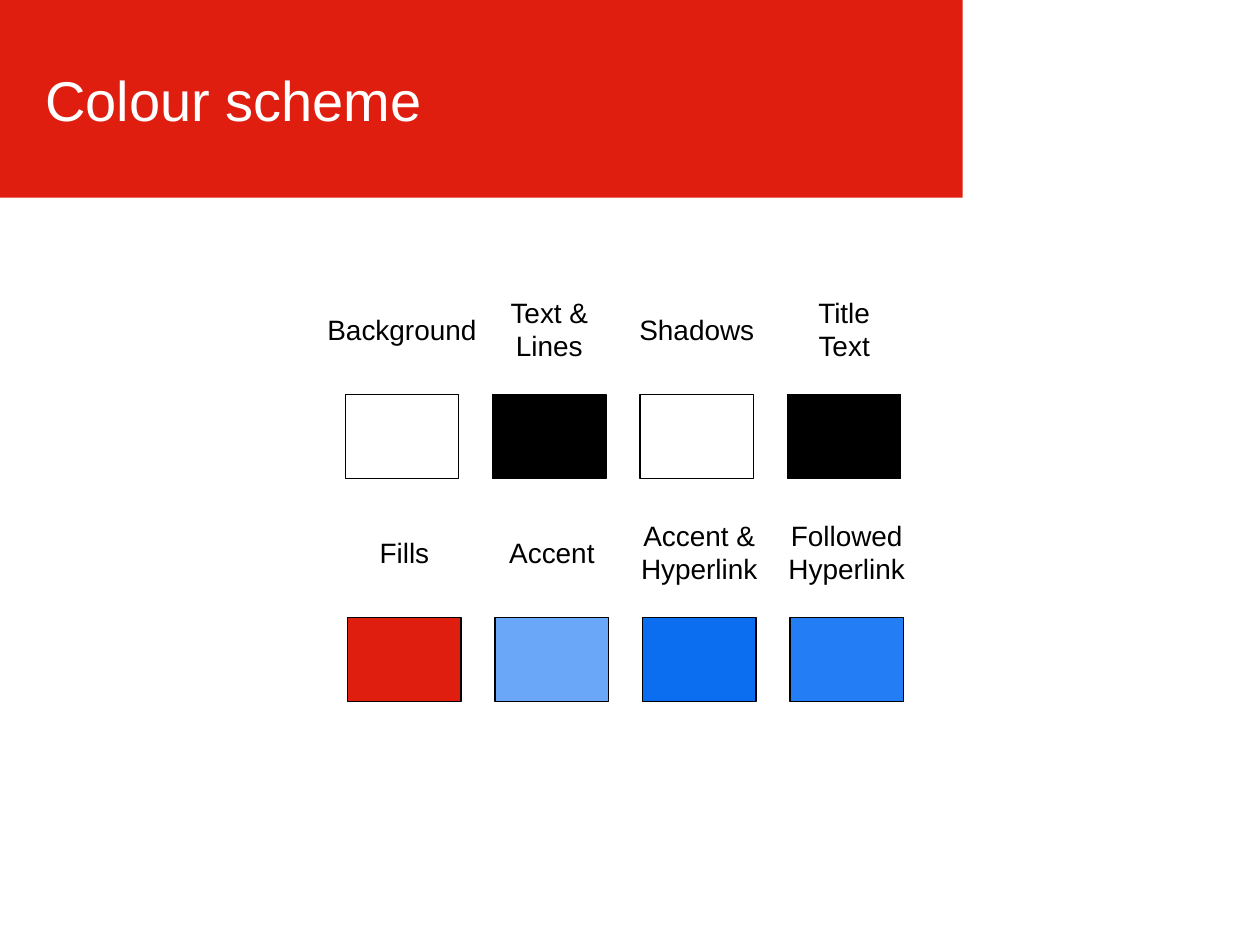
import pptx
import pptx.dml.color
import pptx.enum.shapes
import pptx.enum.text
import pptx.util

COLOURS = {
    "white": "FFFFFF",
    "black": "000000",
    "red": "DF1E0F",
    "light blue": "6BA7F8",
    "blue": "0B6DEF",
    "mid blue": "237DF5",
}
FONT = "Arial"
SLIDE_WIDTH, SLIDE_HEIGHT = 10, 7.5
COLUMN_PITCH = 1.17
SWATCH_WIDTH, SWATCH_HEIGHT = 0.9, 0.67
LABEL_RISE = 0.52  # from label centre down to swatch top
LINE_HEIGHT, LABEL_PADDING = 0.27, 0.1

# Each row: left, top of swatches, then (label, label width, colour).
PALETTE = [
    (2.74, 3.13, [
        ("Background", 1.39, "white"),
        ("Text &\nLines", 0.84, "black"),
        ("Shadows", 1.12, "white"),
        ("Title\vText", 0.63, "black"),
    ]),
    (2.76, 4.9, [
        ("Fills", 0.61, "red"),
        ("Accent", 0.89, "light blue"),
        ("Accent &\nHyperlink", 1.14, "blue"),
        ("Followed\nHyperlink", 1.14, "mid blue"),
    ]),
]


def rgb(name):
    return pptx.dml.color.RGBColor.from_string(COLOURS[name])


def inches(*lengths):
    return [pptx.util.Inches(length) for length in lengths]


def add_block(slide, left, top, width, height, fill, outline=None):
    block = slide.shapes.add_shape(
        pptx.enum.shapes.MSO_SHAPE.RECTANGLE, *inches(left, top, width, height))
    block.shadow.inherit = False
    block.fill.solid()
    block.fill.fore_color.rgb = rgb(fill)
    if outline:
        block.line.color.rgb = rgb(outline)
        block.line.width = pptx.util.Pt(0.75)
    else:
        block.line.fill.background()


def add_text(slide, text, left, top, width, height, size, colour, align):
    frame = slide.shapes.add_textbox(*inches(left, top, width, height)).text_frame
    frame.word_wrap = True
    frame.vertical_anchor = pptx.enum.text.MSO_ANCHOR.MIDDLE
    frame.text = text
    for paragraph in frame.paragraphs:
        paragraph.alignment = align
        for run in paragraph.runs:
            run.font.name = FONT
            run.font.size = pptx.util.Pt(size)
            run.font.color.rgb = rgb(colour)
    return frame


def add_title_band(slide, title):
    add_block(slide, 0, 0, 7.64, 1.57, "red")
    add_text(slide, title, 0.26, 0.16, 7.09, 1.25, 32, "white",
             pptx.enum.text.PP_ALIGN.LEFT)


def add_labelled_swatch(slide, left, top, label, label_width, colour):
    add_block(slide, left, top, SWATCH_WIDTH, SWATCH_HEIGHT, colour, "black")
    label_height = LABEL_PADDING + LINE_HEIGHT * len(label.splitlines())
    frame = add_text(slide, label,
                     left + (SWATCH_WIDTH - label_width) / 2,
                     top - LABEL_RISE - label_height / 2,
                     label_width, label_height, 16, "black",
                     pptx.enum.text.PP_ALIGN.CENTER)
    frame.word_wrap = False
    frame.auto_size = pptx.enum.text.MSO_AUTO_SIZE.SHAPE_TO_FIT_TEXT


def main():
    deck = pptx.Presentation()
    deck.slide_width, deck.slide_height = inches(SLIDE_WIDTH, SLIDE_HEIGHT)
    slide = deck.slides.add_slide(deck.slide_layouts[6])
    add_title_band(slide, "Colour scheme")
    for left, top, swatches in PALETTE:
        for column, swatch in enumerate(swatches):
            add_labelled_swatch(slide, left + column * COLUMN_PITCH, top, *swatch)
    deck.save("out.pptx")


if __name__ == "__main__":
    main()
